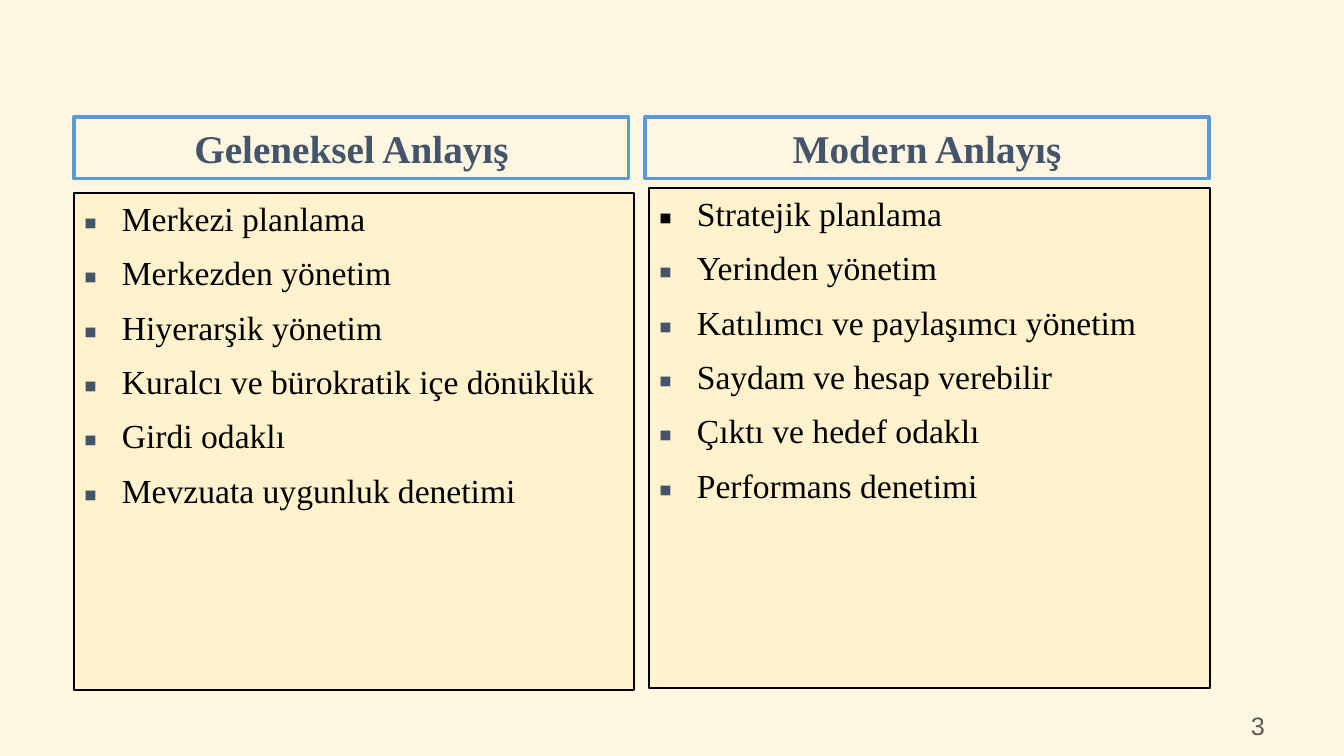
from lxml import etree
from pptx import Presentation, util as u
from pptx.dml.color import RGBColor
from pptx.enum import shapes, text
from pptx.oxml.ns import qn

PX = 9071  # EMU in one px, at 100.8 px to the inch
SERIF = "Times New Roman"
SLATE, BLACK, CREAM, BLUE = "44546A", "000000", "FFF2CC", "5B9BD5"


def px(n):
    return u.Emu(n * PX)


def rgb(value):
    return RGBColor.from_string(value)


def add_text(p, content, size, font=SERIF, color=BLACK, bold=False):
    r = p.add_run()
    r.text = content
    r.font.size, r.font.name, r.font.bold = u.Pt(size), font, bold
    r.font.color.rgb = rgb(color)


def add_bullet(p, color):
    pPr = p._p.get_or_add_pPr()
    pPr.set("marL", str(px(38)))
    pPr.set("indent", str(px(-38)))
    clr = etree.SubElement(pPr, qn("a:buClr"))
    etree.SubElement(clr, qn("a:srgbClr"), val=color)
    etree.SubElement(pPr, qn("a:buFont"), typeface="Noto Sans Symbols")
    etree.SubElement(pPr, qn("a:buChar"), char="▪")


def add_box(s, box, line, width, fill=None):
    sp = s.shapes.add_shape(shapes.MSO_SHAPE.RECTANGLE, *map(px, box))
    sp.shadow.inherit = False
    if fill:
        sp.fill.solid()
        sp.fill.fore_color.rgb = rgb(fill)
    else:
        sp.fill.background()
    sp.line.color.rgb = rgb(line)
    sp.line.width = u.Pt(width)
    sp.text_frame.word_wrap = True
    return sp.text_frame


def add_heading(s, box, title):
    tf = add_box(s, box, BLUE, 2.25)
    tf.vertical_anchor = text.MSO_ANCHOR.MIDDLE
    p = tf.paragraphs[0]
    p.alignment = text.PP_ALIGN.CENTER
    add_text(p, title, 28, color=SLATE, bold=True)


def add_list(s, box, items, first_bullet):
    tf = add_box(s, box, BLACK, 1, CREAM)
    tf.vertical_anchor = text.MSO_ANCHOR.TOP
    for i, item in enumerate(items):
        p = tf.add_paragraph() if i else tf.paragraphs[0]
        p.alignment = text.PP_ALIGN.LEFT
        p.space_before = u.Pt(10)
        add_bullet(p, SLATE if i else first_bullet)
        add_text(p, item, 24)


def add_page_number(s, box, number):
    tf = s.shapes.add_textbox(*map(px, box)).text_frame
    tf.word_wrap = True
    add_text(tf.paragraphs[0], number, 18, font="Arial", color="595959")


def main():
    prs = Presentation()
    prs.slide_width, prs.slide_height = px(1344), px(756)
    s = prs.slides.add_slide(prs.slide_layouts[6])
    s.background.fill.solid()
    s.background.fill.fore_color.rgb = rgb("FFF6E1")

    # Traditional approach
    add_heading(s, (74, 117, 555, 62), "Geleneksel Anlayış")
    add_list(s, (74, 193, 560, 497), [
        "Merkezi planlama", "Merkezden yönetim", "Hiyerarşik yönetim",
        "Kuralcı ve bürokratik içe dönüklük", "Girdi odaklı",
        "Mevzuata uygunluk denetimi"], SLATE)

    # Modern approach
    add_heading(s, (645, 117, 564, 62), "Modern Anlayış")
    add_list(s, (649, 188, 561, 500), [
        "Stratejik planlama", "Yerinden yönetim",
        "Katılımcı ve paylaşımcı yönetim", "Saydam ve hesap verebilir",
        "Çıktı ve hedef odaklı", "Performans denetimi"], BLACK)

    # Page number
    add_page_number(s, (1241, 705, 103, 40), "3")
    prs.save("out.pptx")


if __name__ == "__main__":
    main()
